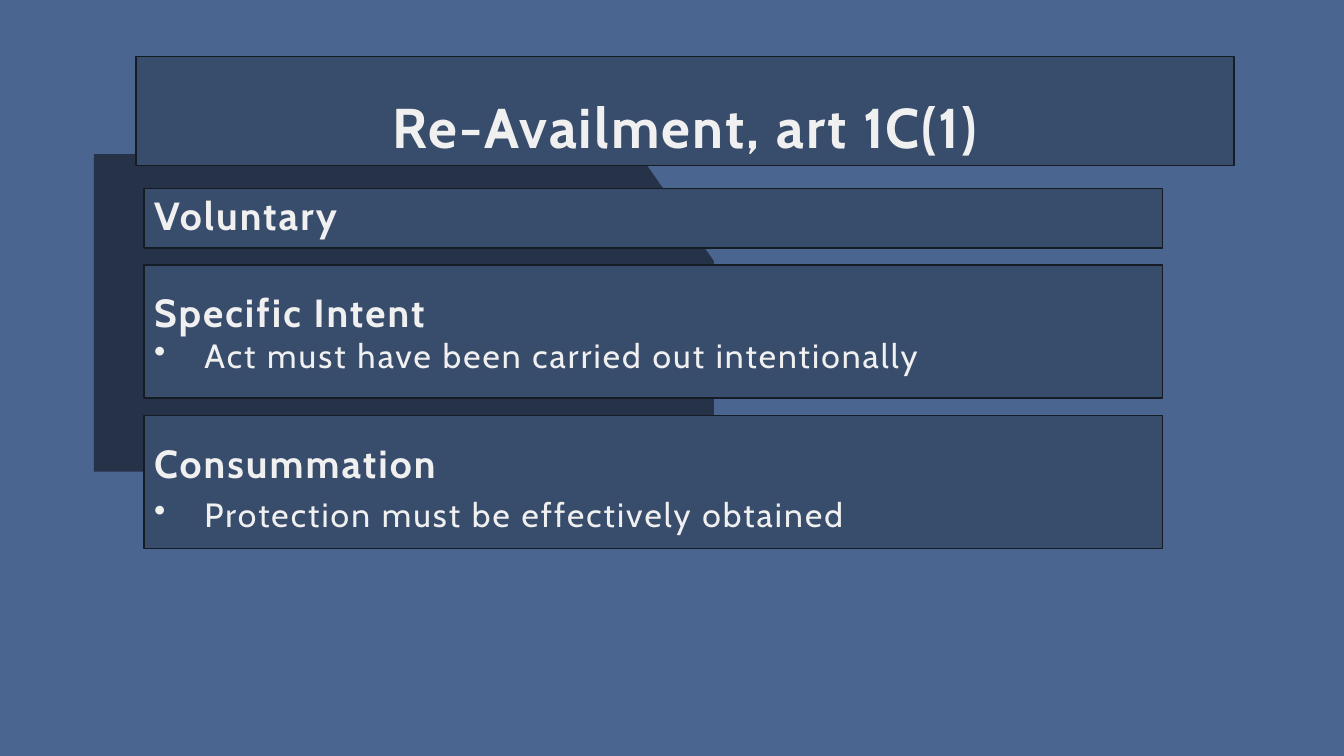
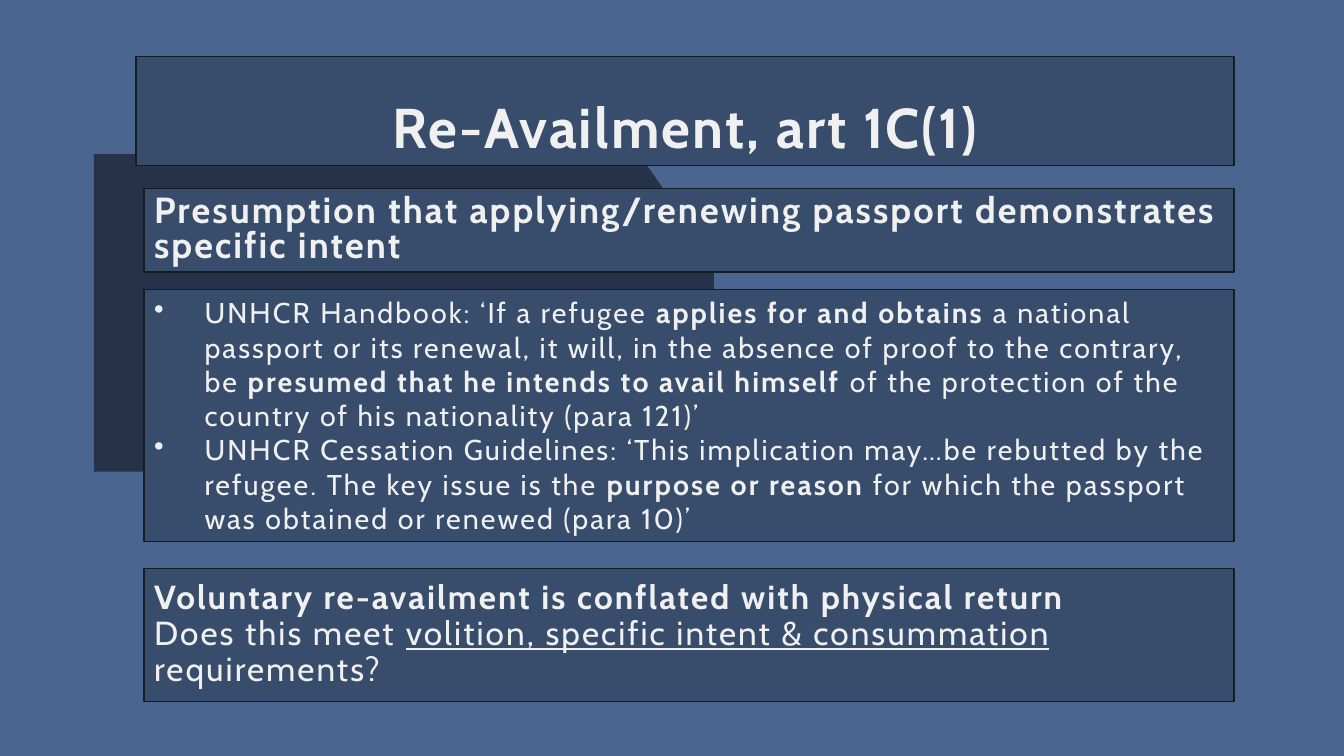
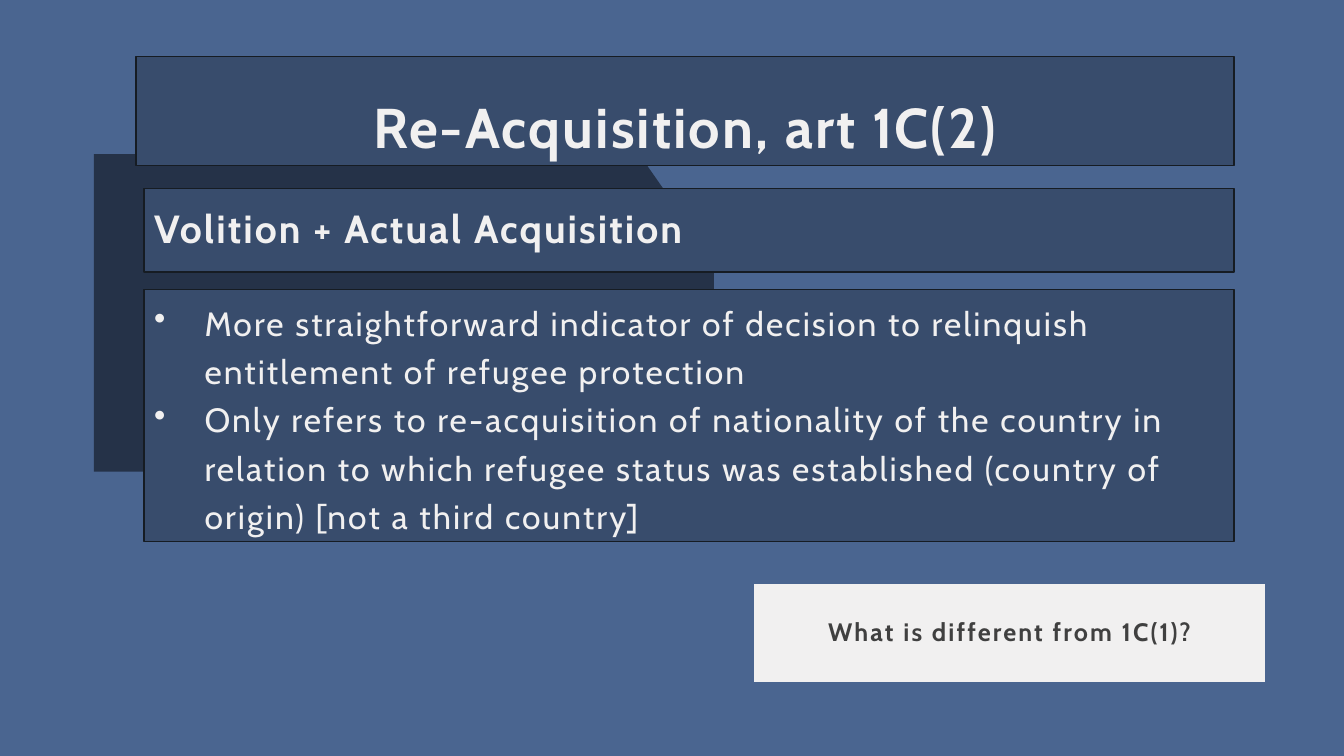
"""Build three slides on re-availment and re-acquisition under article 1C."""
from dataclasses import dataclass

from lxml.etree import SubElement
from pptx import Presentation
from pptx.dml.color import RGBColor
from pptx.enum.shapes import MSO_SHAPE
from pptx.enum.text import MSO_ANCHOR, MSO_AUTO_SIZE, PP_ALIGN
from pptx.oxml.ns import qn
from pptx.util import Inches, Pt


@dataclass(frozen=True)
class Theme:
    font: str = "Cabin"
    back: str = "4A6590"
    dark: str = "253248"
    panel: str = "384C6C"
    edge: str = "161C23"
    light: str = "F1F0F0"
    ink: str = "404040"
    title: float = 40
    head: float = 28
    body: float = 24
    lead: float = 25.9
    quote: float = 20.4
    close: float = 23.8
    note: float = 18
    track: int = 150


@dataclass(frozen=True)
class Para:
    runs: tuple
    size: float
    bold: bool = False
    bullet: bool = False
    lines: float = 1.0


@dataclass(frozen=True)
class Panel:
    height: float
    paras: tuple
    width: float = 10.81
    extra: float = 0


LOOK = Theme()
LEFT, TOP, GAP = 1.43, 1.87, 0.17
TITLE = (1.35, 0.56, 10.89, 1.08)
NOTE = (7.46, 5.77, 5.11, 1.02)
CORNER = [(0.93, 1.53), (6.34, 1.53), (7.08, 2.59), (7.08, 4.68), (0.93, 4.68)]
BOLD, LINE = "bold", "underline"


def head(text, size=LOOK.head, lines=0.9):
    return Para((text,), size, bold=True, lines=lines)


def item(*runs, size=LOOK.body, lines=1.0):
    return Para(runs, size, bullet=True, lines=lines)


SLIDES = [
    ("Re-Availment, art 1C(1)", [
        Panel(0.59, (head("Voluntary"),), width=10.1),
        Panel(1.32, (
            head("Specific Intent", lines=1.0),
            item("Act must have been carried out intentionally"),
        ), width=10.1),
        Panel(1.32, (
            head("Consummation", lines=1.2),
            item("Protection must be effectively obtained", lines=1.2),
        ), width=10.1),
    ], None),
    ("Re-Availment, art 1C(1)", [
        Panel(0.83, (head(
            "Presumption that applying/renewing passport demonstrates specific intent",
            LOOK.lead, 0.8),)),
        Panel(2.5, (
            item("UNHCR Handbook: ‘If a refugee ",
                 ("applies for and obtains ", BOLD),
                 "a national passport or its renewal, it will, in the absence of "
                 "proof to the contrary, be ",
                 ("presumed that he intends to avail himself ", BOLD),
                 "of the protection of the country of his nationality (para 121)’",
                 size=LOOK.quote),
            item("UNHCR Cessation Guidelines: ‘This implication may…be rebutted by "
                 "the refugee. The key issue is the ",
                 ("purpose or reason ", BOLD),
                 "for which the passport was obtained or renewed (para 10)’",
                 size=LOOK.quote),
        )),
        Panel(1.32, (
            head("Voluntary re-availment is conflated with physical return", LOOK.close),
            Para(("Does this meet ",
                  ("volition, specific intent & consummation", LINE),
                  " requirements?"), LOOK.close, lines=0.9),
        ), extra=0.1),
    ], None),
    ("Re-Acquisition, art 1C(2)", [
        Panel(0.83, (head("Volition + Actual Acquisition"),)),
        Panel(2.5, (
            item("More straightforward indicator of decision to relinquish "
                 "entitlement of refugee protection", lines=1.2),
            item("Only refers to re-acquisition of nationality of the country in "
                 "relation to which refugee status was established (country of "
                 "origin) [not a third country]", lines=1.2),
        )),
    ], "What is different from 1C(1)?"),
]


def color(code):
    return RGBColor.from_string(code)


def paint(shape, fill, edge, weight):
    shape.fill.solid()
    shape.fill.fore_color.rgb = color(fill)
    shape.line.color.rgb = color(edge)
    shape.line.width = Pt(weight)


def place(shape, box):
    shape.left, shape.top, shape.width, shape.height = map(Inches, box)


def write(shape, paras, ink=LOOK.light, align=PP_ALIGN.LEFT, anchor=MSO_ANCHOR.MIDDLE):
    frame = shape.text_frame
    frame.word_wrap = True
    frame.auto_size = MSO_AUTO_SIZE.NONE
    frame.vertical_anchor = anchor
    for index, para in enumerate(paras):
        line = frame.add_paragraph() if index else frame.paragraphs[0]
        line.alignment = align
        line.line_spacing = para.lines
        if para.bullet:
            props = line._p.get_or_add_pPr()
            props.set("marL", str(Inches(0.5)))
            props.set("indent", str(Inches(-0.5)))
            SubElement(props, qn("a:buChar")).set("char", "•")
        font = line.font
        font.name, font.size, font.bold = LOOK.font, Pt(para.size), para.bold
        font.color.rgb = color(ink)
        font._rPr.set("spc", str(LOOK.track))
        for part in para.runs:
            text, style = (part, None) if isinstance(part, str) else part
            run = line.add_run()
            run.text = text
            if style:
                setattr(run.font, style, True)


def add_box(slide, box, fill=LOOK.panel, edge=LOOK.edge, weight=1):
    shape = slide.shapes.add_shape(MSO_SHAPE.RECTANGLE, *map(Inches, box))
    shape.shadow.inherit = False
    paint(shape, fill, edge, weight)
    return shape


def add_corner(slide, layout):
    points = [(Inches(x), Inches(y)) for x, y in CORNER]
    form = slide.shapes.build_freeform(*points[0])
    form.add_line_segments(points[1:], close=True)
    shape = form.convert_to_shape()
    shape.shadow.inherit = False
    shape.fill.solid()
    shape.fill.fore_color.rgb = color(LOOK.dark)
    shape.line.fill.background()
    layout.shapes.element.insert(2, shape.element)


def add_slide(deck, layout, title, panels, note):
    slide = deck.slides.add_slide(layout)
    name = slide.shapes.title
    place(name, TITLE)
    paint(name, LOOK.panel, LOOK.edge, 1)
    write(name, [head(title, LOOK.title)], align=PP_ALIGN.CENTER, anchor=MSO_ANCHOR.BOTTOM)
    top = TOP
    for panel in panels:
        top += panel.extra
        write(add_box(slide, (LEFT, top, panel.width, panel.height)), panel.paras)
        top += panel.height + GAP
    if note:
        card = add_box(slide, NOTE, LOOK.light, LOOK.back, 3)
        write(card, [head(note, LOOK.note)], LOOK.ink, PP_ALIGN.CENTER)
    return slide


def main():
    deck = Presentation()
    deck.slide_width, deck.slide_height = Inches(13.33), Inches(7.5)
    layout = deck.slide_layouts[5]
    layout.background.fill.solid()
    layout.background.fill.fore_color.rgb = color(LOOK.back)
    slides = [add_slide(deck, layout, *entry) for entry in SLIDES]
    add_corner(slides[0], layout)
    deck.save("out.pptx")


if __name__ == "__main__":
    main()
